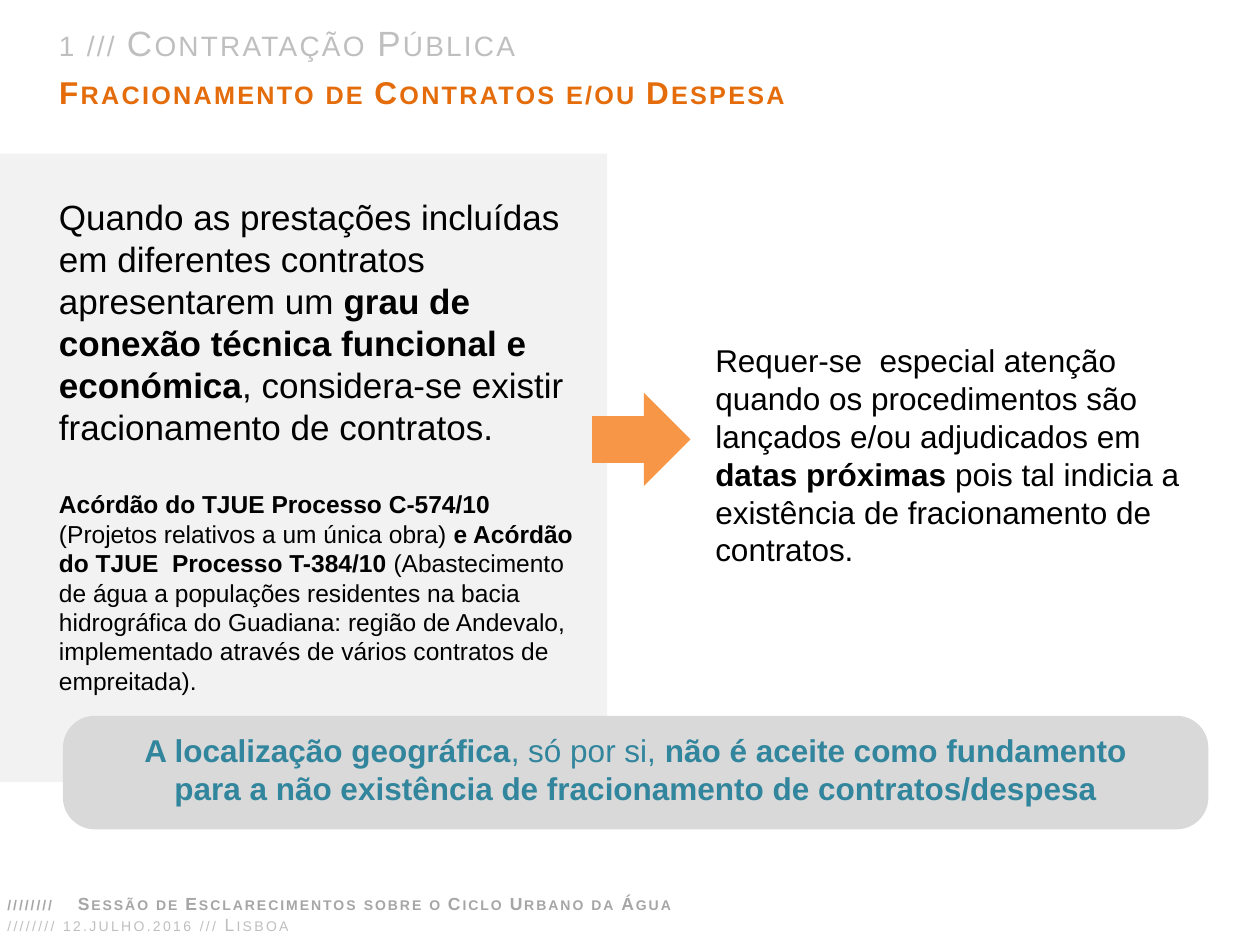
import dataclasses

import pptx
import pptx.dml.color
import pptx.enum.shapes
import pptx.enum.text
import pptx.util
from lxml import etree
from pptx.util import Cm

SHAPES = pptx.enum.shapes.MSO_SHAPE
ALIGN = pptx.enum.text.PP_ALIGN
ANCHOR = pptx.enum.text.MSO_ANCHOR


@dataclasses.dataclass(frozen=True)
class Theme:
    """Colours, font and type sizes of the slide."""
    font: str = "Arial"
    ink: str = "000000"
    panel: str = "F2F2F2"
    callout: str = "D9D9D9"
    teal: str = "31859C"
    muted: str = "BFBFBF"
    footer: str = "A6A6A6"
    title: str = "E46C0A"
    arrow: str = "F79646"
    large: int = 20
    medium: int = 18
    small: int = 14
    tiny: int = 10


@dataclasses.dataclass(frozen=True)
class Box:
    """A rectangle in centimetres."""
    left: float
    top: float
    width: float
    height: float

    def inner(self, dx, dy, width, height):
        """Return a box offset from this one's top left corner."""
        return Box(self.left + dx, self.top + dy, width, height)

    def lengths(self):
        """Return the position and size as lengths."""
        return [Cm(v) for v in (self.left, self.top, self.width, self.height)]


THEME = Theme()


def format_run(run, size, color, bold=False):
    """Apply font, size, colour and weight to a run."""
    run.font.name = THEME.font
    run.font.size = pptx.util.Pt(size)
    run.font.bold = bold
    run.font.color.rgb = pptx.dml.color.RGBColor.from_string(color)


def add_phrases(paragraph, phrases, size, color):
    """Fill a paragraph with (text, bold) phrases."""
    for text, bold in phrases:
        run = paragraph.add_run()
        run.text = text
        format_run(run, size, color, bold)


def small_caps_line(frame, text, size, color, bold=False, spacing=130):
    """Write one line in spaced small capitals."""
    frame.word_wrap = True
    frame.text = text
    run = frame.paragraphs[0].runs[0]
    format_run(run, size, color, bold)
    properties = run.font._element
    properties.set("cap", "small")
    properties.set("spc", str(spacing))


def add_text(slide, box):
    """Add a wrapping text box and return its frame."""
    frame = slide.shapes.add_textbox(*box.lengths()).text_frame
    frame.word_wrap = True
    return frame


def add_filled(slide, kind, box, color):
    """Add a flat shape without an outline."""
    shape = slide.shapes.add_shape(kind, *box.lengths())
    shape.shadow.inherit = False
    shape.fill.solid()
    shape.fill.fore_color.rgb = pptx.dml.color.RGBColor.from_string(color)
    shape.line.fill.background()
    return shape


def build_header(slide, box):
    """Place the section name and the slide title."""
    section = add_text(slide, box.inner(0, 0, box.width, 1.12))
    small_caps_line(section, "1 /// Contratação Pública", THEME.large, THEME.muted)
    title = slide.shapes.title
    title.left, title.top, title.width, title.height = box.inner(0, 1.05, 21.95, 1.02).lengths()
    frame = title.text_frame
    small_caps_line(frame, "Fracionamento de Contratos e/ou Despesa",
                    THEME.medium, THEME.title, bold=True)
    frame.auto_size = pptx.enum.text.MSO_AUTO_SIZE.NONE
    frame.vertical_anchor = ANCHOR.TOP
    frame.paragraphs[0].alignment = ALIGN.LEFT


def build_premise(slide, box):
    """Place the grey panel with the rule and its case law."""
    add_filled(slide, SHAPES.RECTANGLE, box, THEME.panel)
    frame = add_text(slide, box.inner(1.04, 0.71, 11, box.height - 0.71))
    add_phrases(frame.paragraphs[0], [
        ("Quando as prestações incluídas em diferentes contratos apresentarem um ", False),
        ("grau de conexão técnica funcional e económica", True),
        (", considera-se existir fracionamento de contratos.", False),
    ], THEME.large, THEME.ink)
    case_law = frame.add_paragraph()
    case_law.space_before = pptx.util.Pt(24)
    add_phrases(case_law, [
        ("Acórdão do TJUE Processo C-574/10 ", True),
        ("(Projetos relativos a um única obra) ", False),
        ("e Acórdão do TJUE  Processo T-384/10", True),
        (" (Abastecimento de água a populações residentes na bacia hidrográfica do "
         "Guadiana: região de Andevalo, implementado através de vários contratos de "
         "empreitada).", False),
    ], THEME.small, THEME.ink)


def build_warning(slide, box):
    """Place the arrow and the warning it leads to."""
    add_filled(slide, SHAPES.RIGHT_ARROW, box.inner(0, 1.16, 1.98, 1.88), THEME.arrow)
    frame = add_text(slide, box.inner(2.23, 0, box.width - 2.23, box.height))
    add_phrases(frame.paragraphs[0], [
        ("Requer-se  especial atenção quando os procedimentos são lançados e/ou "
         "adjudicados em ", False),
        ("datas próximas ", True),
        ("pois tal indicia a existência de fracionamento de contratos.", False),
    ], THEME.medium, THEME.ink)


def build_callout(slide, box):
    """Place the rounded conclusion bar."""
    bar = add_filled(slide, SHAPES.ROUNDED_RECTANGLE, box, THEME.callout)
    bar.adjustments[0] = 0.28
    frame = bar.text_frame
    frame.word_wrap = True
    frame.vertical_anchor = ANCHOR.MIDDLE
    frame.margin_left = frame.margin_right = Cm(1.12)
    frame.margin_bottom = Cm(0.28)
    conclusion = frame.paragraphs[0]
    conclusion.alignment = ALIGN.CENTER
    add_phrases(conclusion, [
        ("A localização geográfica", True),
        (", só por si, ", False),
        ("não é aceite como fundamento para a não existência de fracionamento de "
         "contratos/despesa", True),
    ], THEME.medium, THEME.teal)


def build_footer(slide, box):
    """Place the event name and its date."""
    date = add_text(slide, box.inner(0, 0.43, box.width, 0.69))
    small_caps_line(date, "//////// 12.julho.2016 /// Lisboa", THEME.tiny, THEME.muted)
    event = add_text(slide, box.inner(0, 0, box.width, 0.69))
    small_caps_line(event, "////////\tSessão de Esclarecimentos sobre o Ciclo Urbano da Água",
                    THEME.tiny, THEME.footer, bold=True, spacing=110)
    properties = event.paragraphs[0]._p.get_or_add_pPr()
    namespace = "{http://schemas.openxmlformats.org/drawingml/2006/main}"
    stops = etree.SubElement(properties, namespace + "tabLst")
    etree.SubElement(stops, namespace + "tab", pos=str(int(Cm(1.42))), algn="l")


def main():
    """Build and save the slide."""
    deck = pptx.Presentation()
    deck.slide_width, deck.slide_height = Cm(25.4), Cm(19.05)
    slide = deck.slides.add_slide(deck.slide_layouts[5])
    build_header(slide, Box(0.94, 0.3, 24.46, 2.07))
    build_premise(slide, Box(-0.1, 3.1, 12.34, 12.67))
    build_warning(slide, Box(11.94, 6.76, 12.44, 4.88))
    build_callout(slide, Box(1.27, 14.43, 23.09, 2.29))
    build_footer(slide, Box(-0.1, 17.88, 19.66, 1.12))
    deck.save("out.pptx")


if __name__ == "__main__":
    main()
